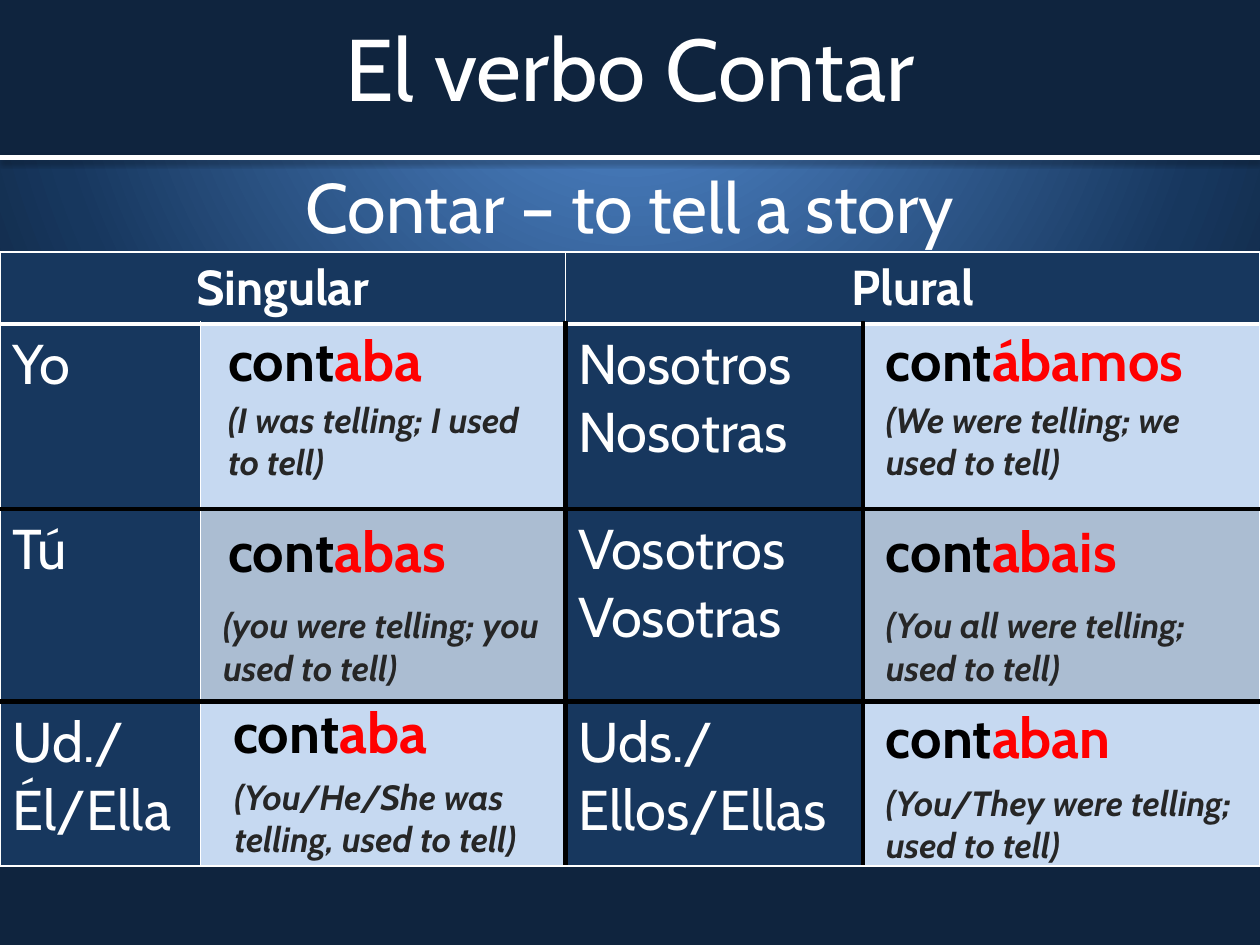
from dataclasses import dataclass
from typing import Any

from lxml.etree import SubElement
from pptx import Presentation
from pptx.dml.color import RGBColor
from pptx.enum.shapes import MSO_CONNECTOR as Connector, MSO_SHAPE as Shape
from pptx.enum.text import MSO_ANCHOR as Anchor, PP_ALIGN as Align
from pptx.oxml import parse_xml
from pptx.oxml.ns import nsdecls, qn
from pptx.util import Emu, Inches, Pt

WIDTH, HEIGHT = Inches(10), Inches(7.5)
NAVY, BLUE, PALE, GREY = "0F243E", "17375E", "C6D9F1", "ABBDD2"
WHITE, BLACK, RED, CHARCOAL = "FFFFFF", "000000", "FF0000", "262626"
NO_STYLE = "{2D5ABB26-0587-4C30-8999-92F81FD0307C}"

TITLE = {"size": Pt(50), "color": WHITE}
SUBTITLE = {"size": Pt(40), "color": WHITE}
HEADING = {"size": Pt(28), "color": WHITE, "bold": True}
PRONOUN = {"size": Pt(32), "color": WHITE}
STEM = {"size": Pt(32), "color": BLACK, "bold": True}
ENDING = STEM | {"color": RED}
MEANING = {"size": Pt(20), "color": CHARCOAL, "bold": True, "italic": True}


@dataclass(frozen=True)
class Area:
    left: float
    top: float
    width: float
    height: float

    def lengths(self) -> tuple[Emu, Emu, Emu, Emu]:
        return across(self.left), down(self.top), across(self.width), down(self.height)


@dataclass(frozen=True)
class Form:
    ending: str
    meaning: str
    word_area: Area
    meaning_area: Area


@dataclass(frozen=True)
class Edge:
    color: str
    points: float


THIN, THICK, DARK = Edge(WHITE, 1), Edge(WHITE, 3), Edge(BLACK, 3)

COLUMNS = (15.9, 29, 23.6, 31.5)
ROWS = (7.6, 19.6, 20.4, 17.4)
HEADINGS = ("Singular", "Plural")
PRONOUNS = (
    (("Yo",), ("Nosotros", "Nosotras")),
    (("Tú",), ("Vosotros", "Vosotras")),
    (("Ud./Él/Ella",), ("Uds./Ellos/Ellas",)),
)
FORM_FILLS = (PALE, GREY, PALE)

FORMS = (
    Form("aba", "(I was telling; I used to tell)",
         Area(17.1, 34, 24.6, 8.4), Area(17.1, 41.6, 26.4, 10.27)),
    Form("abas", "(you were telling; you used to tell)",
         Area(17.1, 54.13, 23.4, 8.4), Area(16.7, 63.33, 28.2, 10.27)),
    Form("aba", "(You/He/She was telling, used to tell)",
         Area(17.5, 73.33, 24.6, 8.93), Area(17.6, 81.47, 27.3, 10.27)),
    Form("ábamos", "(We were telling; we used to tell)",
         Area(69.3, 34, 28.2, 9.07), Area(69.3, 41.6, 30.7, 10.27)),
    Form("abais", "(You all were telling; used to tell)",
         Area(69.3, 54.13, 25.2, 8.4), Area(69.3, 63.33, 29.2, 10.27)),
    Form("aban", "(You/They were telling; used to tell)",
         Area(69.3, 73.87, 24, 8.4), Area(69.3, 82.13, 30.7, 10.27)),
)


def across(percent: float) -> Emu:
    return Emu(round(WIDTH * percent / 100))


def down(percent: float) -> Emu:
    return Emu(round(HEIGHT * percent / 100))


def rgb(color: str) -> RGBColor:
    return RGBColor.from_string(color)


def add_span(para: Any, text: str, style: dict[str, Any]) -> None:
    span = para.add_run()
    span.text = text
    for name, value in ({"name": "Cabin"} | style).items():
        if name == "color":
            span.font.color.rgb = rgb(value)
        else:
            setattr(span.font, name, value)


def write_lines(frame: Any, lines: tuple[str, ...], style: dict[str, Any],
                align: Align = Align.LEFT) -> None:
    for index, line in enumerate(lines):
        para = frame.add_paragraph() if index else frame.paragraphs[0]
        para.alignment = align
        add_span(para, line, style)


def add_heading(page: Any, text: str, area: Area, style: dict[str, Any], anchor: Anchor) -> None:
    frame = page.shapes.add_textbox(*area.lengths()).text_frame
    for name, value in {"word_wrap": True, "vertical_anchor": anchor}.items():
        setattr(frame, name, value)
    write_lines(frame, (text,), style, Align.CENTER)


def add_plain_table(page: Any, rows: int, columns: int, area: Area) -> Any:
    table = page.shapes.add_table(rows, columns, *area.lengths()).table
    for name in ("first_row", "horz_banding"):
        setattr(table, name, False)
    table._tbl.tblPr.find(qn("a:tableStyleId")).text = NO_STYLE
    return table


def add_spans_table(page: Any, area: Area, *spans: tuple[str, dict[str, Any]]) -> None:
    cell = add_plain_table(page, 1, 1, area).cell(0, 0)
    cell.fill.background()
    for text, style in spans:
        add_span(cell.text_frame.paragraphs[0], text, style)


def draw_border(cell: Any, side: str, edge: Edge) -> None:
    line = SubElement(cell._tc.get_or_add_tcPr(), qn(f"a:ln{side}"), w=str(Pt(edge.points)))
    fill = SubElement(line, qn("a:solidFill"))
    SubElement(fill, qn("a:srgbClr"), val=edge.color)


def upright_edge(row: int, boundary: int) -> Edge:
    return DARK if row and boundary in (2, 3) else THIN


def level_edge(boundary: int) -> Edge:
    return {1: THICK, 2: DARK, 3: DARK}.get(boundary, THIN)


def add_conjugation_grid(page: Any) -> None:
    table = add_plain_table(page, len(ROWS), len(COLUMNS), Area(0, 26.67, 100, sum(ROWS)))
    for column, share in zip(table.columns, COLUMNS):
        column.width = across(share)
    for row, share in zip(table.rows, ROWS):
        row.height = down(share)
    for row in range(len(ROWS)):
        for column in range(len(COLUMNS)):
            cell = table.cell(row, column)
            draw_border(cell, "L", upright_edge(row, column))
            draw_border(cell, "R", upright_edge(row, column + 1))
            draw_border(cell, "T", level_edge(row))
            draw_border(cell, "B", level_edge(row + 1))
            cell.fill.solid()
            is_form = row and column % 2
            cell.fill.fore_color.rgb = rgb(FORM_FILLS[row - 1] if is_form else BLUE)
    for half, heading in enumerate(HEADINGS):
        cell = table.cell(0, 2 * half)
        cell.merge(table.cell(0, 2 * half + 1))
        write_lines(cell.text_frame, (heading,), HEADING, Align.CENTER)
        for row, pronouns in enumerate(PRONOUNS, 1):
            write_lines(table.cell(row, 2 * half).text_frame, pronouns[half], PRONOUN)


def paint_background(page: Any) -> None:
    stops = "".join(
        f'<a:gs pos="{percent * 1000}"><a:srgbClr val="{color}"/></a:gs>'
        for percent, color in ((0, "558ED5"), (75, BLUE), (100, NAVY)))
    page.element.cSld.insert(0, parse_xml(
        f'<p:bg {nsdecls("p", "a")}><p:bgPr><a:gradFill rotWithShape="1">'
        f'<a:gsLst>{stops}</a:gsLst><a:path path="circle">'
        '<a:fillToRect l="50000" t="-80000" r="50000" b="180000"/></a:path>'
        '</a:gradFill><a:effectLst/></p:bgPr></p:bg>'))


def add_banner(page: Any) -> None:
    banner = page.shapes.add_shape(Shape.RECTANGLE, *Area(0, 0, 100, 16.67).lengths())
    banner.shadow.inherit = False
    banner.fill.solid()
    banner.fill.fore_color.rgb = rgb(NAVY)
    banner.line.fill.background()
    rule = page.shapes.add_connector(
        Connector.STRAIGHT, 0, down(16.67), WIDTH, down(16.67))
    rule.line.color.rgb = rgb(WHITE)
    rule.line.width = Pt(3)
    rule._element.spPr.append(parse_xml(
        f'<a:effectLst {nsdecls("a")}><a:outerShdw blurRad="{Pt(3.1)}" dist="{Pt(1.6)}" '
        f'dir="5400000" rotWithShape="0"><a:srgbClr val="{BLACK}"><a:alpha val="38000"/>'
        '</a:srgbClr></a:outerShdw></a:effectLst>'))


def main() -> None:
    deck = Presentation()
    deck.slide_width, deck.slide_height = WIDTH, HEIGHT
    page = deck.slides.add_slide(deck.slide_layouts[6])
    paint_background(page)
    add_banner(page)
    add_heading(page, "Contar – to tell a story", Area(0, 16.67, 100, 10), SUBTITLE, Anchor.TOP)
    add_heading(page, "El verbo Contar", Area(0, 0, 100, 14.13), TITLE, Anchor.MIDDLE)
    add_conjugation_grid(page)
    for form in FORMS:
        add_spans_table(page, form.word_area, ("cont", STEM), (form.ending, ENDING))
        add_spans_table(page, form.meaning_area, (form.meaning, MEANING))
    deck.save("out.pptx")


if __name__ == "__main__":
    main()
